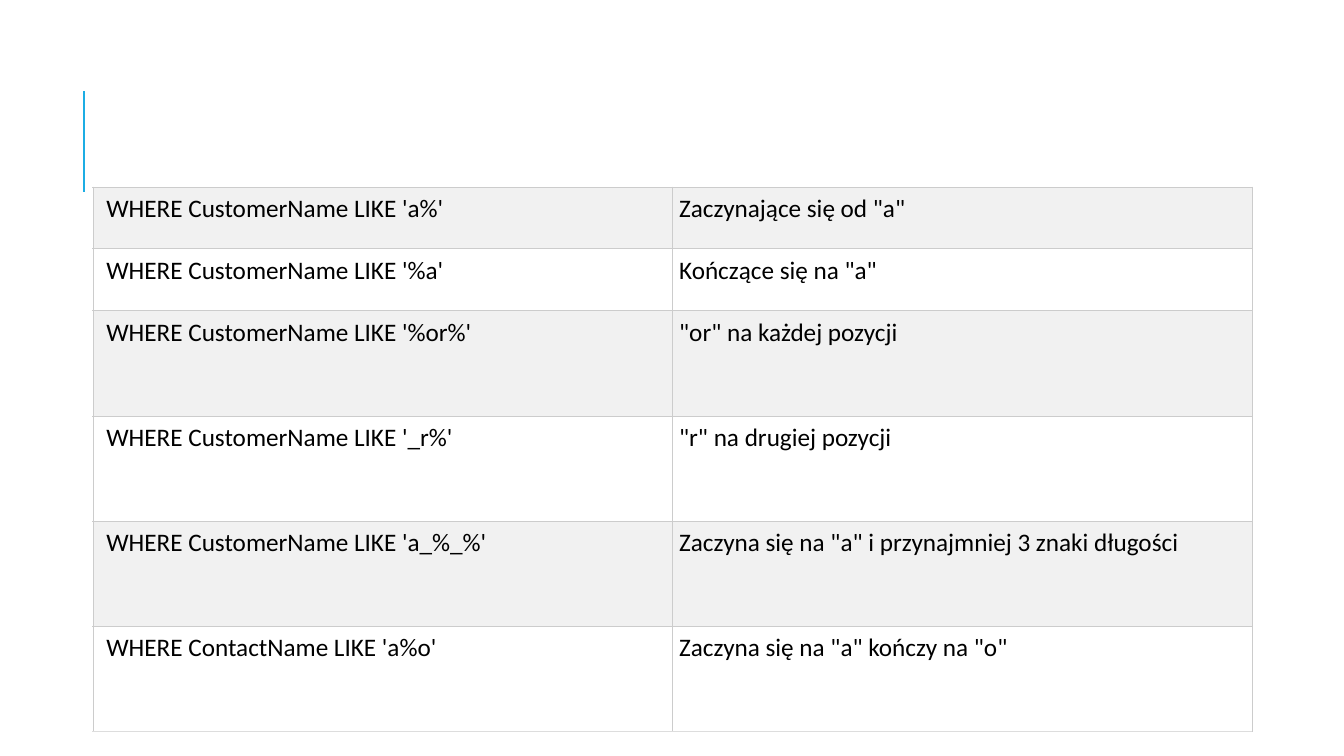
from lxml.etree import SubElement
from pptx import Presentation
from pptx.dml.color import RGBColor
from pptx.enum.shapes import MSO_CONNECTOR
from pptx.oxml.ns import qn
from pptx.util import Cm, Pt

COLORS = {
    "accent": "1CADE4",
    "text": "000000",
    "band": "F1F1F1",
    "plain": "FFFFFF",
    "border": "CCCCCC",
    "last_border": "DDDDDD",
}

# Pattern, meaning and row height in cm
LIKE_ROWS = [
    ("WHERE CustomerName LIKE 'a%'", 'Zaczynające się od "a"', 1.56),
    ("WHERE CustomerName LIKE '%a'", 'Kończące się na "a"', 1.56),
    ("WHERE CustomerName LIKE '%or%'", '"or" na każdej pozycji', 2.65),
    ("WHERE CustomerName LIKE '_r%'", '"r" na drugiej pozycji', 2.65),
    ("WHERE CustomerName LIKE 'a_%_%'", 'Zaczyna się na "a" i przynajmniej 3 znaki długości', 2.65),
    ("WHERE ContactName LIKE 'a%o'", 'Zaczyna się na "a" kończy na "o"', 2.65),
]
LEFT_MARGINS = (0.34, 0.17)


def add_border(cell, side, color):
    line = SubElement(cell._tc.get_or_add_tcPr(), qn(f"a:ln{side}"), w=str(Pt(0.6)))
    fill = SubElement(line, qn("a:solidFill"))
    SubElement(fill, qn("a:srgbClr"), val=color)


presentation = Presentation()
presentation.slide_width = Cm(33.87)
presentation.slide_height = Cm(19.05)
slide = presentation.slides.add_slide(presentation.slide_layouts[6])

# Accent line
accent_line = slide.shapes.add_connector(
    MSO_CONNECTOR.STRAIGHT, Cm(2.12), Cm(4.83), Cm(2.12), Cm(2.29))
accent_line.line.color.rgb = RGBColor.from_string(COLORS["accent"])
accent_line.line.width = Pt(1.5)
SubElement(accent_line._element.spPr, qn("a:effectLst"))

# Table of LIKE patterns
table_height = sum(height for *_, height in LIKE_ROWS)
table = slide.shapes.add_table(
    len(LIKE_ROWS), 2, Cm(2.34), Cm(4.71), Cm(29.21), Cm(table_height)).table
table.first_row = False
table.horz_banding = False

for row_index, (pattern, meaning, height) in enumerate(LIKE_ROWS):
    table.rows[row_index].height = Cm(height)
    is_last = row_index == len(LIKE_ROWS) - 1
    for column_index, text in enumerate((pattern, meaning)):
        cell = table.cell(row_index, column_index)
        cell.margin_left = Cm(LEFT_MARGINS[column_index])
        cell.margin_right = cell.margin_top = cell.margin_bottom = Cm(0.17)

        # Borders come before the fill in the cell properties
        for side in "LRTB":
            add_border(cell, side, COLORS["last_border" if is_last and side == "B" else "border"])
        cell.fill.solid()
        cell.fill.fore_color.rgb = RGBColor.from_string(
            COLORS["plain" if row_index % 2 else "band"])

        cell.text_frame.text = text
        font = cell.text_frame.paragraphs[0].runs[0].font
        font.name = "Calibri"
        font.size = Pt(18)
        font.color.rgb = RGBColor.from_string(COLORS["text"])

presentation.save("out.pptx")
